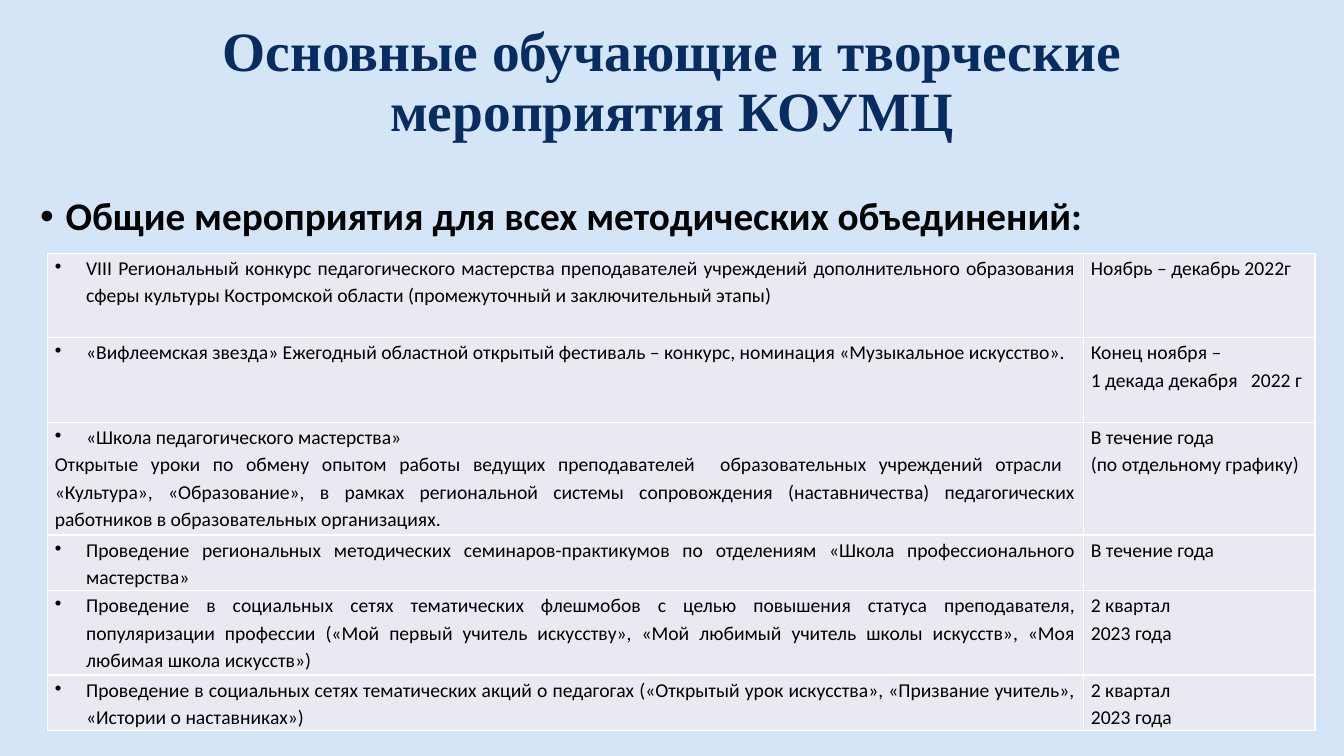
from dataclasses import dataclass

from lxml import etree
from pptx import Presentation
from pptx.dml.color import RGBColor
from pptx.enum.text import MSO_ANCHOR, MSO_AUTO_SIZE, PP_ALIGN
from pptx.oxml.ns import qn
from pptx.util import Cm, Pt

LEFT, CENTER, JUSTIFY = PP_ALIGN.LEFT, PP_ALIGN.CENTER, PP_ALIGN.JUSTIFY
TOP, MIDDLE = MSO_ANCHOR.TOP, MSO_ANCHOR.MIDDLE
NO_FIT = MSO_AUTO_SIZE.NONE


@dataclass(frozen=True)
class Theme:
    background: str = "D4E5F7"
    heading: str = "072C62"
    text: str = "000000"
    cell: str = "E9EAF1"
    border: str = "FFFFFF"
    heading_font: str = "Times New Roman"
    body_font: str = "Calibri"
    title_size: float = 39.6
    list_size: float = 28
    table_size: float = 14


# Content: events (first paragraph bulleted) and their dates
TITLE = "Основные обучающие и творческие мероприятия КОУМЦ"
SUBTITLE = "Общие мероприятия для всех методических объединений:"
EVENTS = [
    (["VIII Региональный конкурс педагогического мастерства преподавателей учреждений "
      "дополнительного образования сферы культуры Костромской области "
      "(промежуточный и заключительный этапы)"],
     ["Ноябрь – декабрь 2022г"]),
    (["«Вифлеемская звезда» Ежегодный областной открытый фестиваль – конкурс, "
      "номинация «Музыкальное искусство»."],
     ["Конец ноября –", "1 декада декабря   2022 г"]),
    (["«Школа педагогического мастерства»",
      "Открытые уроки по обмену опытом работы ведущих преподавателей  образовательных "
      "учреждений отрасли  «Культура», «Образование», в рамках региональной системы "
      "сопровождения (наставничества) педагогических работников в образовательных "
      "организациях."],
     ["В течение года", "(по отдельному графику)"]),
    (["Проведение региональных методических семинаров-практикумов по отделениям "
      "«Школа профессионального мастерства»"],
     ["В течение года"]),
    (["Проведение в социальных сетях тематических флешмобов с целью повышения статуса "
      "преподавателя, популяризации профессии («Мой первый учитель искусству», "
      "«Мой любимый учитель школы искусств», «Моя любимая школа искусств»)"],
     ["2 квартал", "2023 года"]),
    (["Проведение в социальных сетях тематических акций о педагогах («Открытый урок "
      "искусства», «Призвание учитель», «Истории о наставниках»)"],
     ["2 квартал", "2023 года"]),
]
COL_WIDTHS = [26.11, 5.84]
ROW_HEIGHTS = [2.13, 2.13, 2.84, 1.4, 2.13, 1.4]


class SlideBuilder:
    def __init__(self, prs, theme):
        self.theme = theme
        self.slide = prs.slides.add_slide(prs.slide_layouts[1])
        fill = self.slide.background.fill
        fill.solid()
        fill.fore_color.rgb = RGBColor.from_string(theme.background)

    def format(self, p, size, font, color, align, spacing, bold=False):
        p.alignment = align
        p.line_spacing = spacing
        for r in p.runs:
            r.font.size = Pt(size)
            r.font.name = font
            r.font.bold = bold
            r.font.color.rgb = RGBColor.from_string(color)

    def bullet(self, p, indent):
        pPr = p._p.get_or_add_pPr()
        pPr.set("marL", str(Cm(indent)))
        pPr.set("indent", str(-Cm(indent)))
        etree.SubElement(pPr, qn("a:buChar")).set("char", "•")

    def place(self, sp, left, top, width, height, anchor):
        sp.left, sp.top, sp.width, sp.height = map(Cm, (left, top, width, height))
        tf = sp.text_frame
        tf.auto_size = NO_FIT
        tf.vertical_anchor = anchor
        return tf

    def title(self, text, *box):
        t = self.theme
        tf = self.place(self.slide.shapes.title, *box, MIDDLE)
        tf.margin_bottom = Cm(1.63)
        tf.text = text
        self.format(tf.paragraphs[0], t.title_size, t.heading_font, t.heading, CENTER, 0.9, True)

    def body(self, text, *box):
        t = self.theme
        tf = self.place(self.slide.placeholders[1], *box, TOP)
        tf.text = text
        p = tf.paragraphs[0]
        self.format(p, t.list_size, t.body_font, t.text, LEFT, 0.9, True)
        p.space_before = Pt(10)
        self.bullet(p, 0.64)

    def borders(self, cell):
        tcPr = cell._tc.get_or_add_tcPr()
        for side in ("lnL", "lnR", "lnT", "lnB"):
            ln = etree.SubElement(tcPr, qn(f"a:{side}"), w=str(Pt(1)))
            fill = etree.SubElement(ln, qn("a:solidFill"))
            etree.SubElement(fill, qn("a:srgbClr"), val=self.theme.border)

    def cell(self, cell, lines, align, bulleted):
        t = self.theme
        cell.margin_left = cell.margin_right = Cm(0.19)
        cell.margin_top = cell.margin_bottom = 0
        self.borders(cell)
        cell.fill.solid()
        cell.fill.fore_color.rgb = RGBColor.from_string(t.cell)
        tf = cell.text_frame
        tf.text = "\n".join(lines)
        for p in tf.paragraphs:
            self.format(p, t.table_size, t.body_font, t.text, align, 1.15)
        if bulleted:
            self.bullet(tf.paragraphs[0], 0.79)

    def table(self, events, left, top, widths, heights):
        frame = self.slide.shapes.add_table(
            len(heights), len(widths), Cm(left), Cm(top), Cm(sum(widths)), Cm(sum(heights)))
        table = frame.table
        table.first_row = table.horz_banding = False
        for column, width in zip(table.columns, widths):
            column.width = Cm(width)
        for row, height, (event, dates) in zip(table.rows, heights, events):
            row.height = Cm(height)
            self.cell(row.cells[0], event, JUSTIFY, True)
            self.cell(row.cells[1], dates, LEFT, False)


def main():
    prs = Presentation()
    prs.slide_width, prs.slide_height = Cm(33.87), Cm(19.05)
    s = SlideBuilder(prs, Theme())

    # Heading and list line
    s.title(TITLE, 2.33, 1.02, 29.21, 3.68)
    s.body(SUBTITLE, 0.76, 4.83, 32.39, 13.46)

    # Schedule of events
    s.table(EVENTS, 1.19, 6.38, COL_WIDTHS, ROW_HEIGHTS)

    prs.save("out.pptx")


if __name__ == "__main__":
    main()
